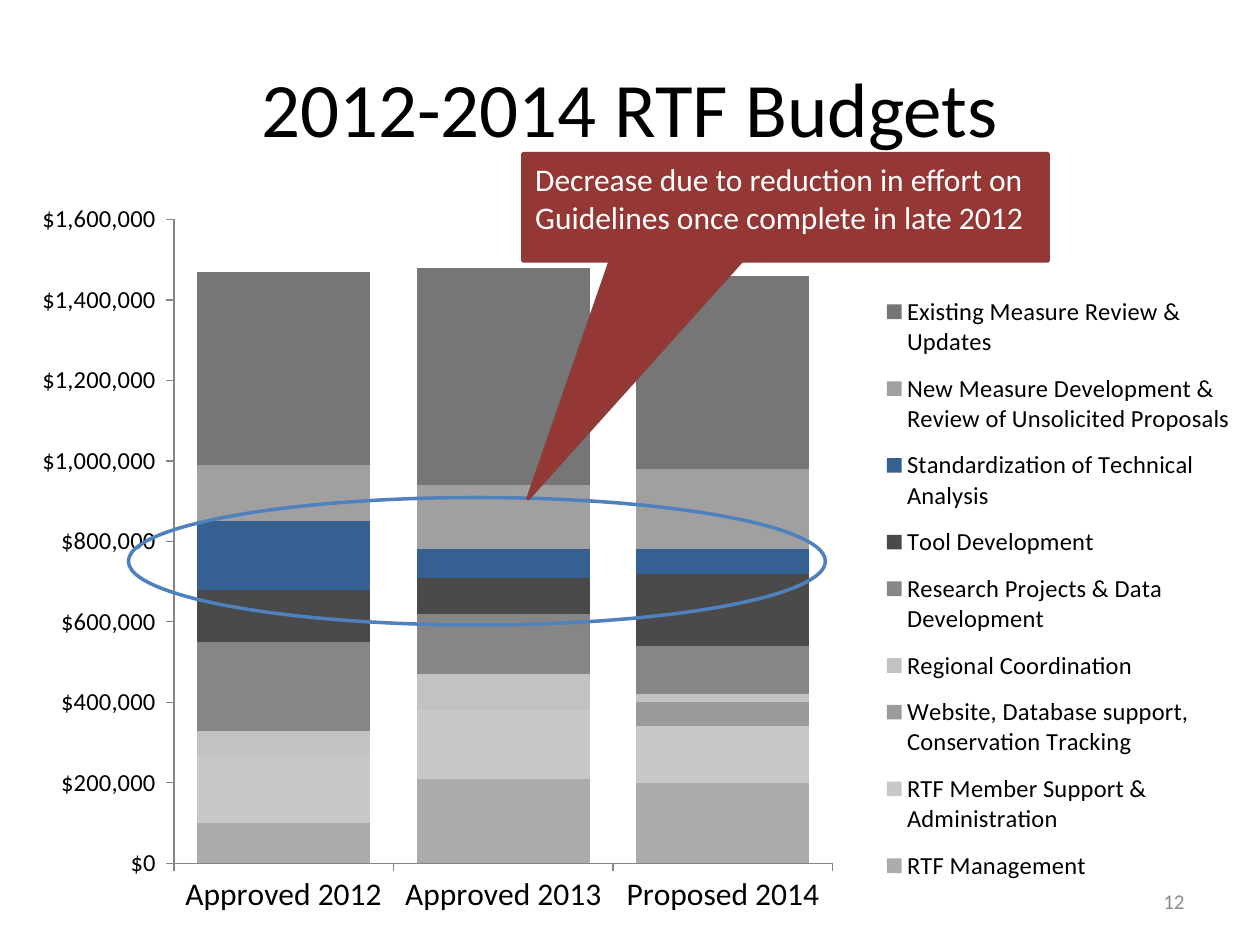
from dataclasses import dataclass

from lxml.etree import SubElement
from pptx import Presentation
from pptx.chart.data import CategoryChartData
from pptx.dml.color import RGBColor
from pptx.enum.chart import XL_CHART_TYPE, XL_LEGEND_POSITION, XL_TICK_MARK
from pptx.enum.shapes import MSO_SHAPE
from pptx.enum.text import MSO_ANCHOR, PP_ALIGN
from pptx.oxml.ns import qn
from pptx.util import Cm, Pt


@dataclass(frozen=True)
class Theme:
    font: str = "Calibri"
    ink: str = "000000"
    white: str = "FFFFFF"
    mute: str = "8C8C8C"
    axis: str = "868686"
    ring: str = "4F81BD"
    note: str = "953735"
    edge: str = "8E3B39"
    head: int = 44
    body: int = 18
    small: int = 14
    page: int = 12


THEME = Theme()

YEARS = ["Approved 2012", "Approved 2013", "Proposed 2014"]

# Name, fill, budget in thousands of dollars for each year
ITEMS = [
    ("RTF Management", "ABABAB", (100, 210, 200)),
    ("RTF Member Support & Administration", "C8C8C8", (170, 170, 140)),
    ("Website, Database support, Conservation Tracking", "9B9B9B", (0, 0, 60)),
    ("Regional Coordination", "C2C2C2", (60, 90, 20)),
    ("Research Projects & Data Development", "868686", (220, 150, 120)),
    ("Tool Development", "4A4A4A", (130, 90, 180)),
    ("Standardization of Technical Analysis", "376092", (170, 70, 60)),
    ("New Measure Development & Review of Unsolicited Proposals",
     "A0A0A0", (140, 160, 200)),
    ("Existing Measure Review & Updates", "767676", (480, 540, 480)),
]


def rgb(code):
    return RGBColor.from_string(code)


def style(font, size, color):
    font.name = THEME.font
    font.size = Pt(size)
    font.color.rgb = rgb(color)


def write(frame, text, size, color, align, anchor):
    """Put one styled run into a text frame."""
    frame.word_wrap = True
    frame.vertical_anchor = anchor
    para = frame.paragraphs[0]
    para.alignment = align
    run = para.add_run()
    run.text = text
    style(run.font, size, color)


def place(shape, box):
    shape.left, shape.top, shape.width, shape.height = map(Cm, box)


def pin(layout, box, inner=False):
    """Fix a chart part at fractions of the chart space."""
    for old in list(layout):
        layout.remove(old)
    manual = SubElement(layout, qn("c:manualLayout"))
    parts = [("layoutTarget", "inner")] if inner else []
    parts += [("xMode", "edge"), ("yMode", "edge"), *zip("xywh", box)]
    for tag, val in parts:
        SubElement(manual, qn(f"c:{tag}")).set("val", str(val))


def add_title(slide, box):
    title = slide.shapes.title
    place(title, box)
    write(title.text_frame, "2012-2014 RTF Budgets", THEME.head, THEME.ink,
          PP_ALIGN.CENTER, MSO_ANCHOR.MIDDLE)


def add_budget(slide, box):
    data = CategoryChartData()
    data.categories = YEARS
    for name, _, vals in ITEMS:
        data.add_series(name, [val * 1000 for val in vals])
    chart = slide.shapes.add_chart(
        XL_CHART_TYPE.COLUMN_STACKED, *map(Cm, box), data).chart
    chart.has_title = False
    style(chart.font, THEME.body, THEME.ink)

    # Columns
    plot = chart.plots[0]
    plot.gap_width, plot.overlap = 27, 100
    plot.vary_by_categories = False
    for bar, (_, color, _) in zip(plot.series, ITEMS):
        bar.format.fill.solid()
        bar.format.fill.fore_color.rgb = rgb(color)

    # Axes
    years, money = chart.category_axis, chart.value_axis
    for axis, size in ((years, THEME.body), (money, THEME.small)):
        style(axis.tick_labels.font, size, THEME.ink)
        axis.has_major_gridlines = False
        axis.major_tick_mark = XL_TICK_MARK.OUTSIDE
        axis.format.line.color.rgb = rgb(THEME.axis)
        axis.format.line.width = Pt(0.75)
    money.minimum_scale, money.maximum_scale = 0, 1600000
    money.major_unit = 200000
    money.tick_labels.number_format = r'"$"#,##0_);\("$"#,##0\)'
    money.tick_labels.number_format_is_linked = False

    # Legend
    chart.has_legend = True
    legend = chart.legend
    legend.position = XL_LEGEND_POSITION.RIGHT
    legend.include_in_layout = False
    style(legend.font, THEME.small, THEME.ink)

    # Fixed places of plot and legend
    area = plot._element.getparent()
    pin(area.get_or_add_layout() if hasattr(area, "get_or_add_layout")
        else first_layout(area), (0.138, 0.083, 0.523, 0.814), inner=True)
    spot = SubElement(legend._element, qn("c:layout"))
    legend._element.find(qn("c:legendPos")).addnext(spot)
    pin(spot, (0.69, 0.16, 0.3, 0.78))


def first_layout(area):
    layout = area.find(qn("c:layout"))
    if layout is None:
        layout = SubElement(area, qn("c:layout"))
        area.insert(0, layout)
    return layout


def add_ring(slide, box):
    ring = slide.shapes.add_shape(MSO_SHAPE.OVAL, *map(Cm, box))
    ring.shadow.inherit = False
    ring.fill.background()
    ring.line.color.rgb = rgb(THEME.ring)
    ring.line.width = Pt(2)


def add_note(slide, box):
    note = slide.shapes.add_shape(
        MSO_SHAPE.RECTANGULAR_CALLOUT, *map(Cm, box))
    note.adjustments[0], note.adjustments[1] = -0.49, 2.72
    note.shadow.inherit = False
    note.fill.solid()
    note.fill.fore_color.rgb = rgb(THEME.note)
    note.line.color.rgb = rgb(THEME.edge)
    note.line.width = Pt(2)
    write(note.text_frame,
          "Decrease due to reduction in effort on Guidelines once complete "
          "in late 2012",
          THEME.body, THEME.white, PP_ALIGN.LEFT, MSO_ANCHOR.TOP)


def add_page(slide, box):
    page = slide.shapes.add_textbox(*map(Cm, box))
    write(page.text_frame, "12", THEME.page, THEME.mute,
          PP_ALIGN.RIGHT, MSO_ANCHOR.MIDDLE)


def main():
    deck = Presentation()
    deck.slide_width, deck.slide_height = Cm(25.4), Cm(19.05)
    slide = deck.slides.add_slide(deck.slide_layouts[5])
    add_title(slide, (1.27, 0.56, 22.86, 3.18))
    add_budget(slide, (0, 3.1, 25.4, 15.95))
    add_ring(slide, (2.59, 10.03, 14.05, 2.57))
    add_note(slide, (10.54, 3.1, 10.59, 2.16))
    add_page(slide, (18.21, 17.65, 5.92, 1.02))
    deck.save("out.pptx")


if __name__ == "__main__":
    main()
